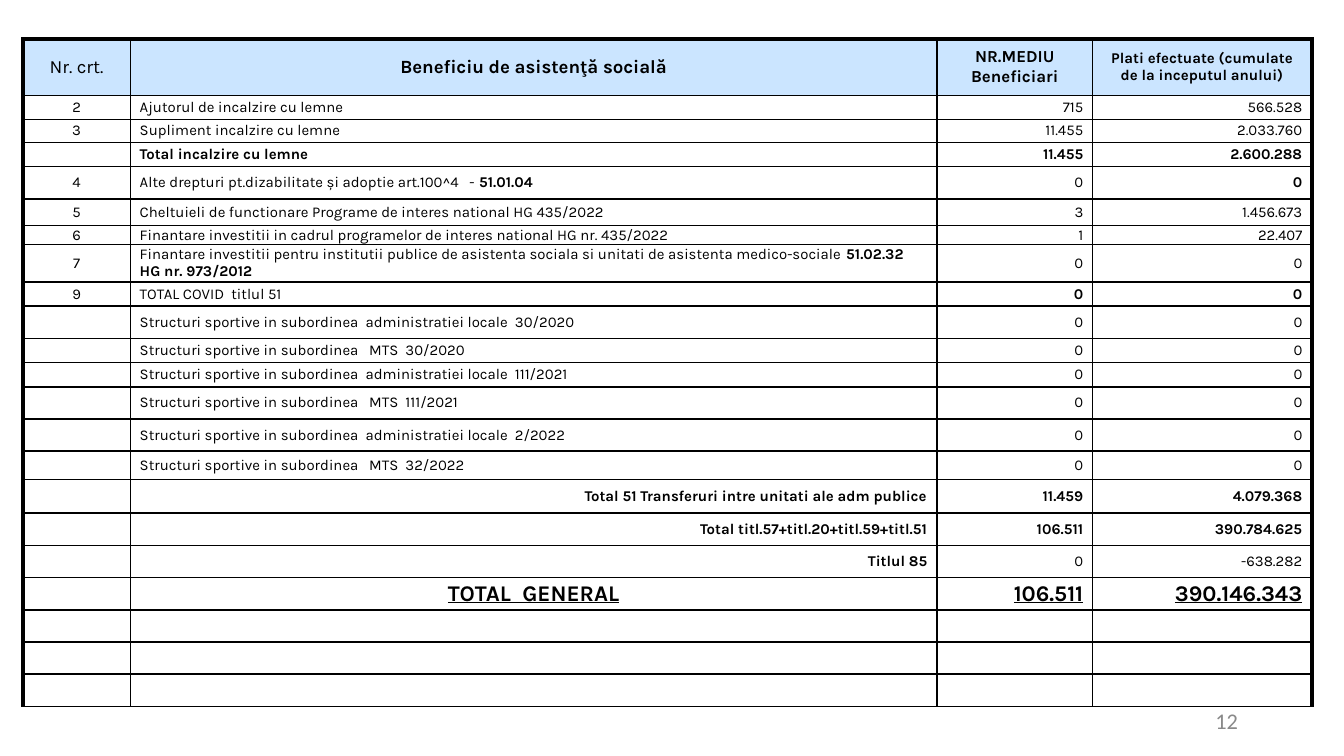
from dataclasses import dataclass

from lxml.etree import SubElement
from pptx import Presentation
from pptx.dml.color import RGBColor
from pptx.enum.text import MSO_ANCHOR, PP_ALIGN
from pptx.oxml.ns import qn
from pptx.util import Inches, Pt


@dataclass(frozen=True)
class Theme:
    font: str = "Karla"
    number_font: str = "Calibri"
    ink: str = "000000"
    muted: str = "898989"
    header_fill: str = "99CCFF"
    header_opacity: int = 50
    thin: float = 1
    thick: float = 2.25
    body: float = 8
    header: float = 9
    heading: float = 10
    total: float = 12


@dataclass(frozen=True)
class Span:
    text: str
    size: float = Theme.body
    bold: bool = False
    underline: bool = False


def strong(text, size=Theme.body):
    return Span(text, size, bold=True)


def grand(text):
    return Span(text, Theme.total, bold=True, underline=True)


LEFT, CENTER, RIGHT = PP_ALIGN.LEFT, PP_ALIGN.CENTER, PP_ALIGN.RIGHT
COLUMN_WIDTHS = [0.8, 6, 1.16, 1.63]
HEADER_HEIGHT = 0.42
EMPTY_ROWS = 3
EMPTY_HEIGHT = 0.24
HEADER = [
    Span("Nr. crt.", Theme.heading),
    strong("Beneficiu de asistenţă socială", Theme.heading),
    strong("NR.MEDIU Beneficiari", Theme.header),
    strong("Plati efectuate (cumulate de la inceputul anului)"),
]
SPORT = "Structuri sportive in subordinea "
SPORT_ROWS = [
    (height, LEFT, ["", SPORT + unit, "0", "0"])
    for height, unit in [
        (0.24, " administratiei locale  30/2020"),
        (0.18, "  MTS  30/2020"),
        (0.18, " administratiei locale  111/2021"),
        (0.24, "  MTS  111/2021"),
        (0.24, " administratiei locale  2/2022"),
        (0.21, "  MTS  32/2022"),
    ]
]
BENEFIT_ROWS = [
    (0.18, LEFT, ["2", "Ajutorul de incalzire cu lemne", "715", "566.528"]),
    (0.17, LEFT, ["3", "Supliment incalzire cu lemne", "11.455", "2.033.760"]),
    (0.18, LEFT, ["", strong("Total incalzire cu lemne"), strong("11.455"), strong("2.600.288")]),
    (0.24, LEFT, ["4", ["Alte drepturi pt.dizabilitate și adoptie art.100^4   - ", strong("51.01.04")],
                  "0", strong("0")]),
    (0.2, LEFT, ["5", "Cheltuieli de functionare Programe de interes national HG 435/2022",
                 "3", "1.456.673"]),
    (0.14, LEFT, ["6", "Finantare investitii in cadrul programelor de interes national HG nr. 435/2022",
                  "1", "22.407"]),
    (0.28, LEFT, ["7", ["Finantare investitii pentru institutii publice de asistenta sociala si unitati "
                        "de asistenta medico-sociale ", strong("51.02.32  HG nr. 973/2012")], "0", "0"]),
    (0.18, LEFT, ["9", "TOTAL COVID  titlul 51", strong("0"), strong("0")]),
]
TOTAL_ROWS = [
    (0.25, RIGHT, ["", strong("Total 51 Transferuri intre unitati ale adm publice"),
                   strong("11.459"), strong("4.079.368")]),
    (0.24, RIGHT, ["", strong("Total titl.57+titl.20+titl.59+titl.51"),
                   strong("106.511"), strong("390.784.625")]),
    (0.24, RIGHT, ["", strong("Titlul 85"), "0", "-638.282"]),
    (0.24, CENTER, ["", grand("TOTAL  GENERAL"), grand("106.511"), grand("390.146.343")]),
]
ROWS = BENEFIT_ROWS + SPORT_ROWS + TOTAL_ROWS + [(EMPTY_HEIGHT, LEFT, [""] * 4)] * EMPTY_ROWS


class SlideBuilder:
    def __init__(self, slide, theme):
        self.slide = slide
        self.theme = theme

    def add_span(self, para, span, font, color):
        run = para.add_run()
        run.text = span.text
        run.font.name = font
        run.font.size = Pt(span.size)
        run.font.bold = span.bold
        run.font.underline = span.underline
        run.font.color.rgb = RGBColor.from_string(color)

    def fill_text(self, cell, content, align):
        cell.vertical_anchor = MSO_ANCHOR.MIDDLE
        para = cell.text_frame.paragraphs[0]
        para.alignment = align
        spans = content if isinstance(content, list) else [content]
        for item in spans:
            span = item if isinstance(item, Span) else Span(item)
            if span.text:
                self.add_span(para, span, self.theme.font, self.theme.ink)
            else:
                SubElement(para._p, qn("a:endParaRPr"), sz=str(int(self.theme.body * 100)))

    def set_margins(self, cell, side, end):
        cell.margin_left = cell.margin_right = Inches(side)
        cell.margin_top = cell.margin_bottom = Inches(end)

    def set_borders(self, cell, thick_sides):
        properties = cell._tc.get_or_add_tcPr()
        for side in "LRTB":
            width = self.theme.thick if side in thick_sides else self.theme.thin
            line = SubElement(properties, qn(f"a:ln{side}"), w=str(Pt(width)))
            fill = SubElement(line, qn("a:solidFill"))
            SubElement(fill, qn("a:srgbClr"), val=self.theme.ink)

    def set_header_fill(self, cell):
        cell.fill.solid()
        cell.fill.fore_color.rgb = RGBColor.from_string(self.theme.header_fill)
        color = cell._tc.tcPr.find(qn("a:solidFill")).find(qn("a:srgbClr"))
        SubElement(color, qn("a:alpha"), val=str(self.theme.header_opacity * 1000))

    def add_table(self, left, top):
        rows = [(HEADER_HEIGHT, CENTER, HEADER)] + ROWS
        width = sum(COLUMN_WIDTHS)
        height = sum(row[0] for row in rows)
        frame = self.slide.shapes.add_table(len(rows), len(COLUMN_WIDTHS), Inches(left), Inches(top),
                                            Inches(width), Inches(height))
        table = frame.table
        table.first_row = table.horz_banding = False
        for column, column_width in zip(table.columns, COLUMN_WIDTHS):
            column.width = Inches(column_width)
        last = len(COLUMN_WIDTHS) - 1
        for row_index, (row_height, label_align, contents) in enumerate(rows):
            table.rows[row_index].height = Inches(row_height)
            is_header = row_index == 0
            value_align = CENTER if is_header else RIGHT
            aligns = [CENTER, label_align, value_align, value_align]
            for index, (content, align) in enumerate(zip(contents, aligns)):
                cell = table.cell(row_index, index)
                padded = is_header and index < last
                self.set_margins(cell, 0.1 if padded else 0.07, 0.04 if padded else 0)
                self.fill_text(cell, content, align)
                edges = {"T": is_header, "L": index == 0, "R": index == last}
                self.set_borders(cell, [side for side, outer in edges.items() if outer])
                if is_header:
                    self.set_header_fill(cell)
                else:
                    cell.fill.background()

    def add_page_number(self, text, left, top, width, height):
        box = self.slide.shapes.add_textbox(Inches(left), Inches(top), Inches(width), Inches(height))
        box.text_frame.word_wrap = True
        box.text_frame.vertical_anchor = MSO_ANCHOR.MIDDLE
        para = box.text_frame.paragraphs[0]
        para.alignment = RIGHT
        self.add_span(para, Span(text, self.theme.total), self.theme.number_font, self.theme.muted)


def main():
    deck = Presentation()
    deck.slide_width = Inches(10)
    deck.slide_height = deck.slide_width * 9 // 16
    page = SlideBuilder(deck.slides.add_slide(deck.slide_layouts[6]), Theme())
    page.add_table(0.17, 0.29)
    page.add_page_number("12", 7.06, 5.21, 2.25, 0.3)
    deck.save("out.pptx")


if __name__ == "__main__":
    main()
